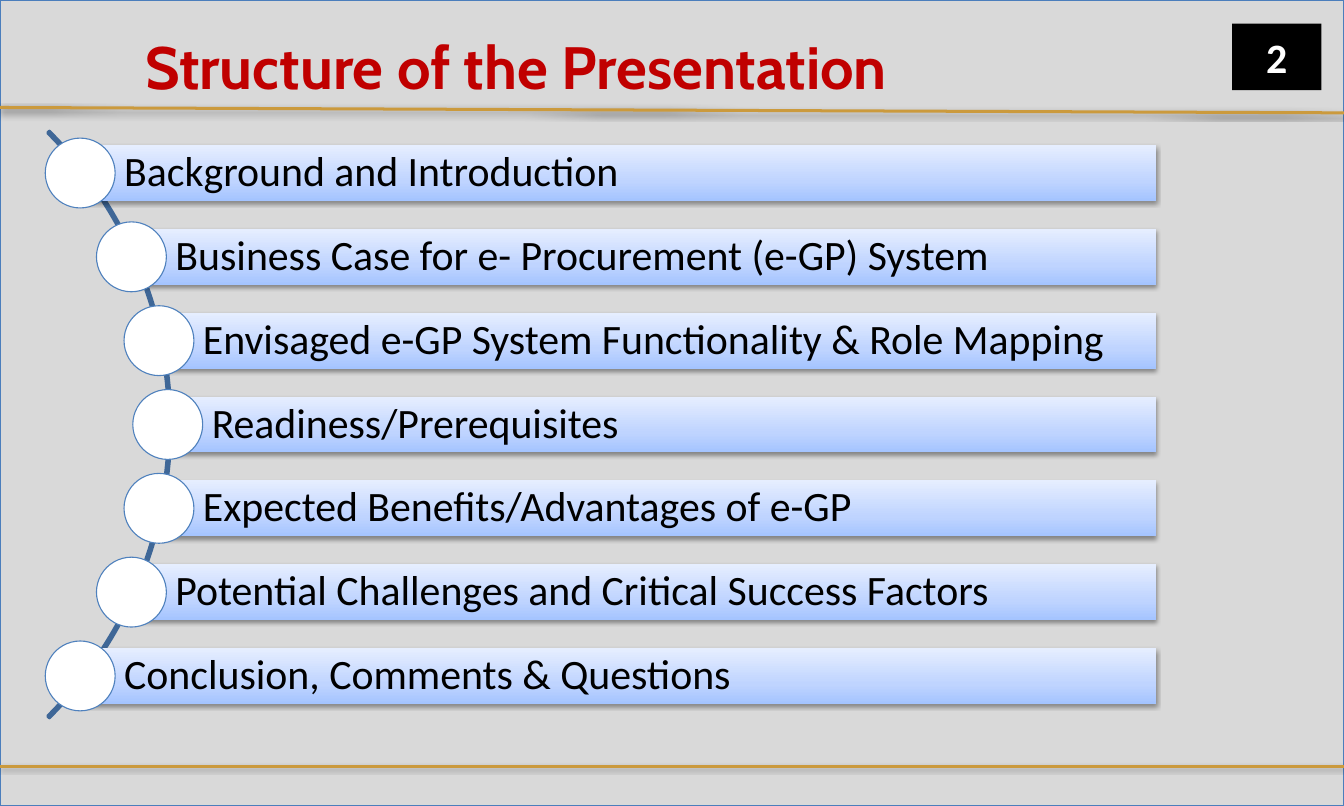
from copy import deepcopy
from math import sqrt

from lxml import etree
from pptx import Presentation
from pptx import util as u
from pptx.dml.color import RGBColor
from pptx.enum import shapes as sh, text as tx
from pptx.oxml.ns import qn

WIDE, HIGH = 12.5, 7.5
TOPICS = [
    "Background and Introduction",
    "Business Case for e- Procurement (e-GP) System",
    "Envisaged e-GP System Functionality & Role Mapping",
    "Readiness/Prerequisites",
    "Expected Benefits/Advantages of e-GP",
    "Potential Challenges and Critical Success Factors",
    "Conclusion, Comments & Questions",
]
ROW = 0.78              # distance between topic rows
MID = 3.95              # centre of the middle row
BEND, TIP = 3.77, 1.56  # radius and rightmost point of the curve of dots
RIGHT = 10.75           # right edge of all bars
BAR, DOT = 0.52, 0.65
ARC = 7.72
STOPS = [(0, "A4C4FF"), (0.35, "BFD4FF"), (1, "E6EEFF")]


def color(code):
    return RGBColor.from_string(code)


def shade(item, alpha=38, dist=1.6):
    """Give a shape or connector a soft shadow straight below it."""
    props = item.element.spPr
    effects = props.find(qn("a:effectLst"))
    if effects is None:
        effects = etree.SubElement(props, qn("a:effectLst"))
    outer = etree.SubElement(
        effects, qn("a:outerShdw"), blurRad=str(u.Pt(3.1)),
        dist=str(u.Pt(dist)), dir="5400000", rotWithShape="0")
    tint = etree.SubElement(outer, qn("a:srgbClr"), val="000000")
    etree.SubElement(tint, qn("a:alpha"), val=str(alpha * 1000))


def shape(home, kind, left, top, width, height, fill=None, line=None, weight=0.75):
    item = home.add_shape(kind, *map(u.Inches, (left, top, width, height)))
    item.shadow.inherit = False
    if fill:
        item.fill.solid()
        item.fill.fore_color.rgb = color(fill)
    else:
        item.fill.background()
    if line:
        item.line.color.rgb = color(line)
        item.line.width = u.Pt(weight)
    else:
        item.line.fill.background()
    return item


def write(item, words, size=28, font="Calibri", ink="000000", bold=False,
          align=tx.PP_ALIGN.LEFT, inset=0.1, pad=0.08, space=1.0):
    frame = item.text_frame
    frame.word_wrap = True
    frame.auto_size = tx.MSO_AUTO_SIZE.NONE
    frame.vertical_anchor = tx.MSO_ANCHOR.MIDDLE
    frame.margin_left = u.Inches(inset)
    frame.margin_right = frame.margin_top = frame.margin_bottom = u.Inches(pad)
    para = frame.paragraphs[0]
    para.alignment, para.line_spacing = align, space
    run = para.add_run()
    run.text = words
    run.font.name, run.font.size, run.font.bold = font, u.Pt(size), bold
    run.font.color.rgb = color(ink)


def rule(home, start, end):
    """Draw a gold line across the slide."""
    line = home.add_connector(
        sh.MSO_CONNECTOR.STRAIGHT, 0, u.Inches(start), u.Inches(WIDE), u.Inches(end))
    line.line.color.rgb = color("CB9A3D")
    line.line.width = u.Pt(2)
    shade(line)


def blend(item):
    """Fill a shape with the blue gradient, darkest at the bottom."""
    item.fill.gradient()
    item.fill.gradient_angle = 90
    first = item.element.spPr.find(".//" + qn("a:gs"))
    first.addnext(deepcopy(first))
    for stop, (place, code) in zip(item.fill.gradient_stops, STOPS):
        stop.position = place
        stop.color.rgb = color(code)


def topic(home, index, words):
    off = (index - len(TOPICS) // 2) * ROW
    x, y = TIP - BEND + sqrt(BEND ** 2 - off ** 2), MID + off
    bar = shape(home, sh.MSO_SHAPE.RECTANGLE, x, y - BAR / 2, RIGHT - x, BAR)
    blend(bar)
    shade(bar)
    write(bar, words, inset=0.41, space=0.9)
    shape(home, sh.MSO_SHAPE.OVAL, x - DOT / 2, y - DOT / 2, DOT, DOT,
          "FFFFFF", "4F81BD")


def main():
    deck = Presentation()
    deck.slide_width, deck.slide_height = u.Inches(WIDE), u.Inches(HIGH)
    slide = deck.slides.add_slide(deck.slide_layouts[5])
    home = slide.shapes

    panel = shape(home, sh.MSO_SHAPE.RECTANGLE, 0, 0, WIDE, HIGH, "D9D9D9", "4B7EBC")
    shade(panel, 35, 1.8)
    rule(home, 7.13, 7.13)
    rule(home, 1, 1.05)

    title = home.title
    title.left, title.top, title.width, title.height = map(
        u.Inches, (0.86, 0.33, 9.73, 0.57))
    write(title, "Structure of the Presentation", size=40, font="Cabin",
          ink="C00000", bold=True, inset=0.49, pad=0.05)
    panel.element.addnext(title.element)

    badge = shape(home, sh.MSO_SHAPE.RECTANGLE, 11.46, 0.22, 0.83, 0.62, "000000")
    write(badge, "2", ink="FFFFFF", bold=True, align=tx.PP_ALIGN.CENTER, pad=0.1)

    group = home.add_group_shape().shapes
    arc = shape(group, sh.MSO_SHAPE.BLOCK_ARC, -6.13, MID - ARC / 2, ARC, ARC,
                line="3F6797", weight=2)
    for index, value in enumerate((189, 27, 0.003)):
        arc.adjustments[index] = value
    for index, words in enumerate(TOPICS):
        topic(group, index, words)

    deck.save("out.pptx")


if __name__ == "__main__":
    main()
